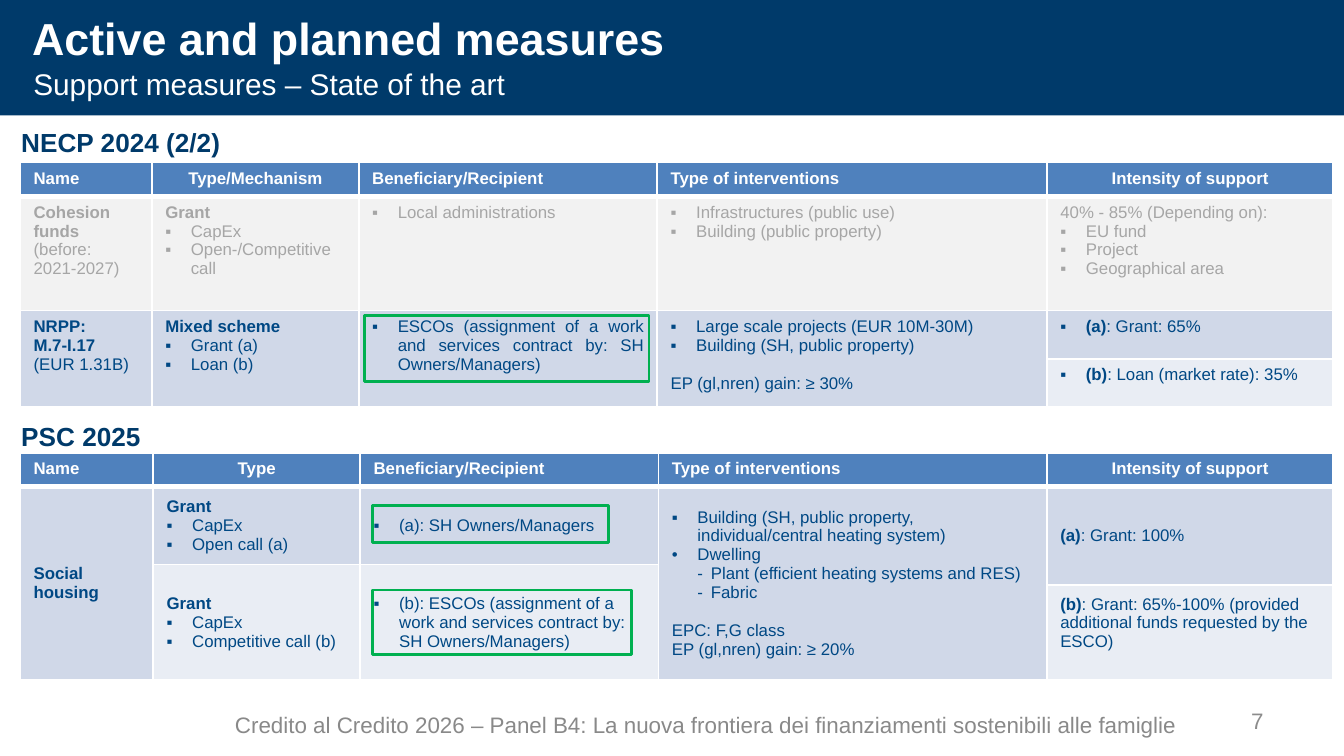
from lxml import etree
from pptx import Presentation
from pptx.dml.color import RGBColor as Rgb
from pptx.enum.shapes import MSO_SHAPE as Shape
from pptx.enum.text import MSO_ANCHOR as Anchor, PP_ALIGN as Align
from pptx.oxml.ns import qn
from pptx.util import Inches, Pt

HUES = {
    "navy": "003A6A", "white": "FFFFFF", "head": "4F81BD", "ink": "004884",
    "dim": "A6A6A6", "pale": "F2F2F2", "blue": "D0D8E8", "light": "E9EDF4",
    "page": "8C8C8C", "foot": "898989", "green": "00B050",
}
MARKS = {"▪": (0.19, -0.19), "•": (0.19, -0.19), "-": (0.29, -0.1)}
HEADS = ["Name", "Type", "Beneficiary/Recipient", "Type of interventions", "Intensity of support"]


def hue(name):
    return Rgb.from_string(HUES[name])


def add_mark(para, mark):
    left, hang = MARKS[mark]
    props = para._p.get_or_add_pPr()
    props.set("marL", str(Inches(left)))
    props.set("indent", str(Inches(hang)))
    font = etree.SubElement(props, qn("a:buFont"))
    font.set("typeface", "Arial")
    etree.SubElement(props, qn("a:buChar")).set("char", mark)


def write(frame, text, size=9, color="ink", align=Align.LEFT, anchor=Anchor.TOP):
    """Stars toggle bold, a leading mark makes a bullet, an empty line makes a gap."""
    frame.word_wrap = True
    frame.vertical_anchor = anchor
    fresh, gap = True, False
    for line in text.split("\n"):
        if not line:
            gap = True
            continue
        para = frame.paragraphs[0] if fresh else frame.add_paragraph()
        fresh = False
        mark, _, rest = line.partition(" ")
        if mark in MARKS:
            add_mark(para, mark)
            line = rest
        para.alignment = align
        if gap:
            para.space_before = Pt(size * 1.15)
            gap = False
        for i, part in enumerate(line.split("*")):
            if part:
                run = para.add_run()
                run.text = part
                font = run.font
                font.name, font.size, font.bold = "Arial", Pt(size), i % 2 == 1
                font.color.rgb = hue(color)


def label(slide, text, x, y, w, h, pad=0.05, **style):
    box = slide.shapes.add_textbox(Inches(x), Inches(y), Inches(w), Inches(h))
    box.text_frame.margin_top = box.text_frame.margin_bottom = Inches(pad)
    write(box.text_frame, text, **style)


def block(slide, x, y, w, h, fill=None, line=None):
    box = slide.shapes.add_shape(Shape.RECTANGLE, Inches(x), Inches(y), Inches(w), Inches(h))
    box.shadow.inherit = False
    if fill:
        box.fill.solid()
        box.fill.fore_color.rgb = hue(fill)
    else:
        box.fill.background()
    if line:
        box.line.color.rgb = hue(line)
        box.line.width = Pt(1.5)
    else:
        box.line.fill.background()


def paint(cell, fill, base=1):
    props = cell._tc.get_or_add_tcPr()
    for side, width in (("L", 1), ("R", 1), ("T", 1), ("B", base)):
        edge = etree.SubElement(props, qn("a:ln" + side))
        edge.set("w", str(Pt(width)))
        solid = etree.SubElement(edge, qn("a:solidFill"))
        etree.SubElement(solid, qn("a:srgbClr")).set("val", HUES["white"])
    cell.fill.solid()
    cell.fill.fore_color.rgb = hue(fill)


def grid(slide, x, y, cols, rows, heads, cells, anchor=Anchor.TOP):
    shape = slide.shapes.add_table(len(rows), len(cols), Inches(x), Inches(y),
                                   Inches(sum(cols)), Inches(sum(rows)))
    table = shape.table
    table.first_row = table.horz_banding = False
    for col, width in zip(table.columns, cols):
        col.width = Inches(width)
    for row, height in zip(table.rows, rows):
        row.height = Inches(height)
    for c, head in enumerate(heads):
        cell = table.cell(0, c)
        paint(cell, "head", 3)
        write(cell.text_frame, f"*{head}*", color="white",
              align=Align.CENTER if c in (1, 4) else Align.LEFT)
    for r, c, span, fill, text, *more in cells:
        opts = more[0] if more else {}
        for step in range(span):
            paint(table.cell(r + step, c), fill)
        cell = table.cell(r, c)
        if span > 1:
            cell.merge(table.cell(r + span - 1, c))
        write(cell.text_frame, text, color="dim" if fill == "pale" else "ink",
              align=opts.get("align", Align.LEFT))
        cell.vertical_anchor = anchor
        cell.margin_bottom = Inches(opts.get("foot", 0.05))


def banner(slide, x, y, w, h):
    block(slide, x, y, w, h, fill="navy")
    style = dict(pad=0, color="white", anchor=Anchor.MIDDLE)
    label(slide, "*Active and planned measures*", x + 0.14, y + 0.08, 9, 0.4, size=24, **style)
    label(slide, "Support measures – State of the art", x + 0.15, y + 0.49, 9.46, 0.27,
          size=16, **style)


def section(slide, title, x, y, drop, frames, **parts):
    label(slide, f"*{title}*", x, y, 3.34, 0.34, size=14, color="navy")
    grid(slide, x + 0.09, y + drop, **parts)
    for left, top, w, h in frames:
        block(slide, x + left, y + top, w, h, line="green")


def footer(slide, x, y):
    label(slide, "7", x + 5.52, y + 0.02, 2.33, 0.3, size=12, color="page",
          align=Align.RIGHT, anchor=Anchor.MIDDLE)
    label(slide, "Credito al Credito 2026 – Panel B4: La nuova frontiera dei finanziamenti "
          "sostenibili alle famiglie", x, y, 8.16, 0.4, size=12, color="foot",
          anchor=Anchor.MIDDLE)


PLAN = [
    (1, 0, 1, "pale", "*Cohesion funds*\n(before: 2021-2027)"),
    (1, 1, 1, "pale", "*Grant*\n▪ CapEx\n▪ Open-/Competitive call"),
    (1, 2, 1, "pale", "▪ Local administrations"),
    (1, 3, 1, "pale", "▪ Infrastructures (public use)\n▪ Building (public property)"),
    (1, 4, 1, "pale", "40% - 85% (Depending on):\n▪ EU fund\n▪ Project\n▪ Geographical area"),
    (2, 0, 2, "blue", "*NRPP:*\n*M.7-I.17*\n(EUR 1.31B)"),
    (2, 1, 2, "blue", "*Mixed scheme*\n▪ Grant (a)\n▪ Loan (b)"),
    (2, 2, 2, "blue", "▪ ESCOs (assignment of a work and services contract by: SH Owners/Managers)",
     {"align": Align.JUSTIFY}),
    (2, 3, 2, "blue", "▪ Large scale projects (EUR 10M-30M)\n▪ Building (SH, public property)\n\n"
     "EP (gl,nren) gain: ≥ 30%"),
    (2, 4, 1, "blue", "▪ *(a)*: Grant: 65%"),
    (3, 4, 1, "light", "▪ *(b)*: Loan (market rate): 35%"),
]
FUND = [
    (1, 0, 3, "blue", "*Social housing*"),
    (1, 1, 1, "blue", "*Grant*\n▪ CapEx\n▪ Open call (a)"),
    (1, 2, 1, "blue", "▪ (a): SH Owners/Managers"),
    (1, 3, 3, "blue", "▪ Building (SH, public property, individual/central heating system)\n"
     "• Dwelling\n- Plant (efficient heating systems and RES)\n- Fabric\n\n"
     "EPC: F,G class\nEP (gl,nren) gain: ≥ 20%"),
    (1, 4, 2, "blue", "*(a)*: Grant: 100%"),
    (2, 1, 2, "light", "*Grant*\n▪ CapEx\n▪ Competitive call (b)"),
    (2, 2, 2, "light",
     "▪ (b): ESCOs (assignment of a work and services contract by: SH Owners/Managers)"),
    (3, 4, 1, "light",
     "*(b)*: Grant: 65%-100% (provided additional funds requested by the ESCO)",
     {"foot": 0.19}),
]


def main():
    deck = Presentation()
    deck.slide_width = Inches(10)
    deck.slide_height = deck.slide_width * 9 // 16
    slide = deck.slides.add_slide(deck.slide_layouts[6])
    banner(slide, 0, 0, 10, 0.86)
    section(slide, "NECP 2024 (2/2)", 0.06, 0.89, 0.32, [(2.65, 1.46, 2.12, 0.49)],
            cols=[0.98, 1.54, 2.22, 2.9, 2.13], rows=[0.24, 0.85, 0.36, 0.36],
            heads=[HEADS[0], "Type/Mechanism", *HEADS[2:]], cells=PLAN)
    section(slide, "PSC 2025", 0.06, 3.08, 0.29,
            [(2.71, 0.68, 1.76, 0.28), (2.71, 1.31, 1.93, 0.48)],
            cols=[0.99, 1.54, 2.22, 2.89, 2.13], rows=[0.25, 0.58, 0.15, 0.71],
            heads=HEADS, cells=FUND, anchor=Anchor.MIDDLE)
    footer(slide, 1.65, 5.19)
    deck.save("out.pptx")


if __name__ == "__main__":
    main()
